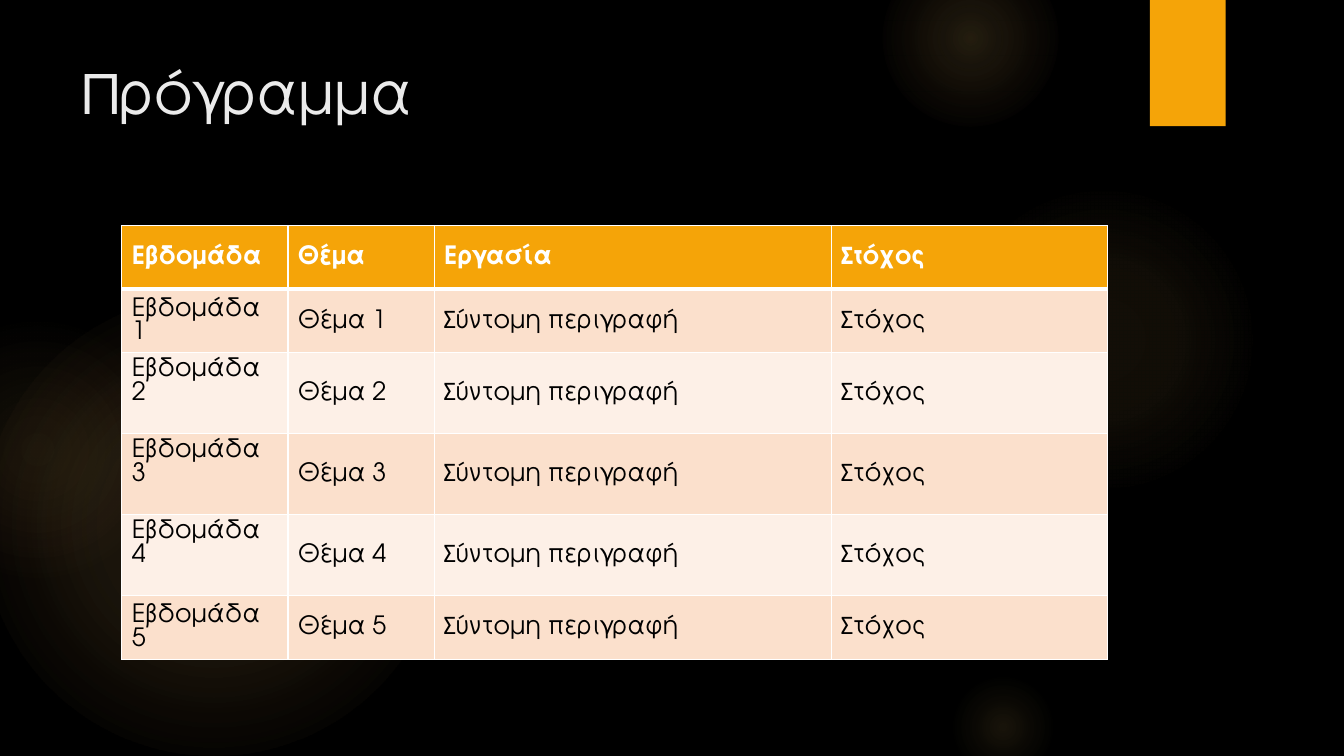
from lxml import etree
from pptx import Presentation
from pptx import util as u
from pptx.dml.color import RGBColor
from pptx.enum import shapes, text
from pptx.oxml import ns

COLORS = {"back": "000000", "title": "EBEBEB", "accent": "F5A408", "glow": "FAC96A",
          "edge": "F59B74", "white": "FFFFFF", "ink": "000000",
          "odd": "FBE0CC", "even": "FDF0E7"}
GLOWS = [(-0.43, 7.42, 11.63, ((0, 11), (36, 10), (75, 0)), "glow"),
         (-2.34, 8.05, 6.55, ((0, 8), (36, 5), (71, 0)), "edge"),
         (23.9, 4.65, 7.82, ((0, 7), (36, 6), (69, 0)), "glow"),
         (22.23, -1.27, 4.45, ((0, 14), (36, 7), (73, 0)), "glow"),
         (23.9, 16.94, 2.74, ((0, 10), (31, 5), (66, 0)), "glow")]
HEADER = ["Εβδομάδα", "Θέμα", "Εργασία", "Στόχος"]
WEEKS = [[f"Εβδομάδα {n}", f"Θέμα {n}", "Σύντομη περιγραφή", "Στόχος"] for n in range(1, 6)]
WIDTHS = [4.19, 3.68, 10.01, 6.96]
HEIGHTS = [1.6, 1.6, 2.04, 2.04, 2.04, 1.6]


def rgb(name):
    return RGBColor.from_string(COLORS[name])


def add(parent, tag, **attrs):
    el = etree.SubElement(parent, ns.qn(tag))
    for key, value in attrs.items():
        el.set(key, str(value))
    return el


class Deck:
    """Dark slide style with a method for each kind of element."""

    font = "TeX Gyre Adventor"

    def __init__(self):
        self.prs = Presentation()
        self.prs.slide_width, self.prs.slide_height = u.Cm(33.87), u.Cm(19.05)
        self.slide = self.prs.slides.add_slide(self.prs.slide_layouts[5])
        fill = self.slide.background.fill
        fill.solid()
        fill.fore_color.rgb = rgb("back")

    def style(self, p, size, color, bold=False):
        p.font.name, p.font.size, p.font.bold = self.font, u.Pt(size), bold
        p.font.color.rgb = rgb(color)
        p.alignment = text.PP_ALIGN.LEFT

    def shape(self, kind, *box):
        sp = self.slide.shapes.add_shape(kind, *map(u.Cm, box))
        sp.shadow.inherit = False
        sp.line.fill.background()
        return sp

    def glow(self, left, top, size, stops, last):
        sp = self.shape(shapes.MSO_SHAPE.OVAL, left, top, size, size)
        props = sp.element.spPr
        props.remove(props.find(ns.qn("a:solidFill"))) if props.find(ns.qn("a:solidFill")) is not None else None
        grad = etree.Element(ns.qn("a:gradFill"), rotWithShape="1")
        props.find(ns.qn("a:prstGeom")).addnext(grad)
        stop_list = add(grad, "a:gsLst")
        for (pos, alpha), color in zip(stops, ("glow", "glow", last)):
            clr = add(add(stop_list, "a:gs", pos=pos * 1000), "a:srgbClr", val=COLORS[color])
            add(clr, "a:alpha", val=alpha * 1000)
        add(add(grad, "a:path", path="circle"), "a:fillToRect", l=50000, t=50000, r=50000, b=50000)

    def tab(self, *box):
        sp = self.shape(shapes.MSO_SHAPE.RECTANGLE, *box)
        sp.fill.solid()
        sp.fill.fore_color.rgb = rgb("accent")
        effects = sp.element.spPr.find(ns.qn("a:effectLst"))
        shadow = add(effects, "a:outerShdw", blurRad=u.Pt(3), dist=u.Pt(2), dir=5400000)
        add(add(shadow, "a:srgbClr", val=COLORS["back"]), "a:alpha", val=45000)

    def title(self, words, *box):
        sp = self.slide.shapes.title
        sp.left, sp.top, sp.width, sp.height = map(u.Cm, box)
        tf = sp.text_frame
        tf.text, tf.word_wrap = words, True
        tf.vertical_anchor = text.MSO_ANCHOR.TOP
        self.style(tf.paragraphs[0], 42, "title")
        self.slide.shapes.element.append(sp.element)

    def cell(self, cell, words, fill, color, bold, bottom):
        cell.text = words
        cell.vertical_anchor = text.MSO_ANCHOR.MIDDLE
        p = cell.text_frame.paragraphs[0]
        self.style(p, 18, color, bold)
        p.line_spacing = u.Pt(17)
        props = cell._tc.get_or_add_tcPr()
        for side, width in (("L", 1), ("R", 1), ("T", 1), ("B", bottom)):
            line = add(add(props, f"a:ln{side}", w=u.Pt(width)), "a:solidFill")
            add(line, "a:srgbClr", val=COLORS["white"])
        cell.fill.solid()
        cell.fill.fore_color.rgb = rgb(fill)

    def table(self, left, top, rows, widths, heights):
        frame = self.slide.shapes.add_table(len(rows), len(widths), u.Cm(left), u.Cm(top),
                                            u.Cm(sum(widths)), u.Cm(sum(heights)))
        tbl = frame.table
        for col, width in zip(tbl.columns, widths):
            col.width = u.Cm(width)
        for i, (row, height) in enumerate(zip(rows, heights)):
            tbl.rows[i].height = u.Cm(height)
            look = ("odd" if i % 2 else "even", "ink", False, 1) if i else ("accent", "white", True, 3)
            for j, words in enumerate(row):
                self.cell(tbl.cell(i, j), words, *look)
            if height > min(heights):
                tbl.cell(i, 0).vertical_anchor = text.MSO_ANCHOR.TOP


def main():
    deck = Deck()
    for glow in GLOWS:
        deck.glow(*glow)
    deck.tab(28.98, 0, 1.91, 3.18)
    deck.title("Πρόγραμμα", 1.8, 1.27, 26.14, 3.89)
    deck.table(3.07, 5.69, [HEADER] + WEEKS, WIDTHS, HEIGHTS)
    deck.prs.save("out.pptx")


if __name__ == "__main__":
    main()
